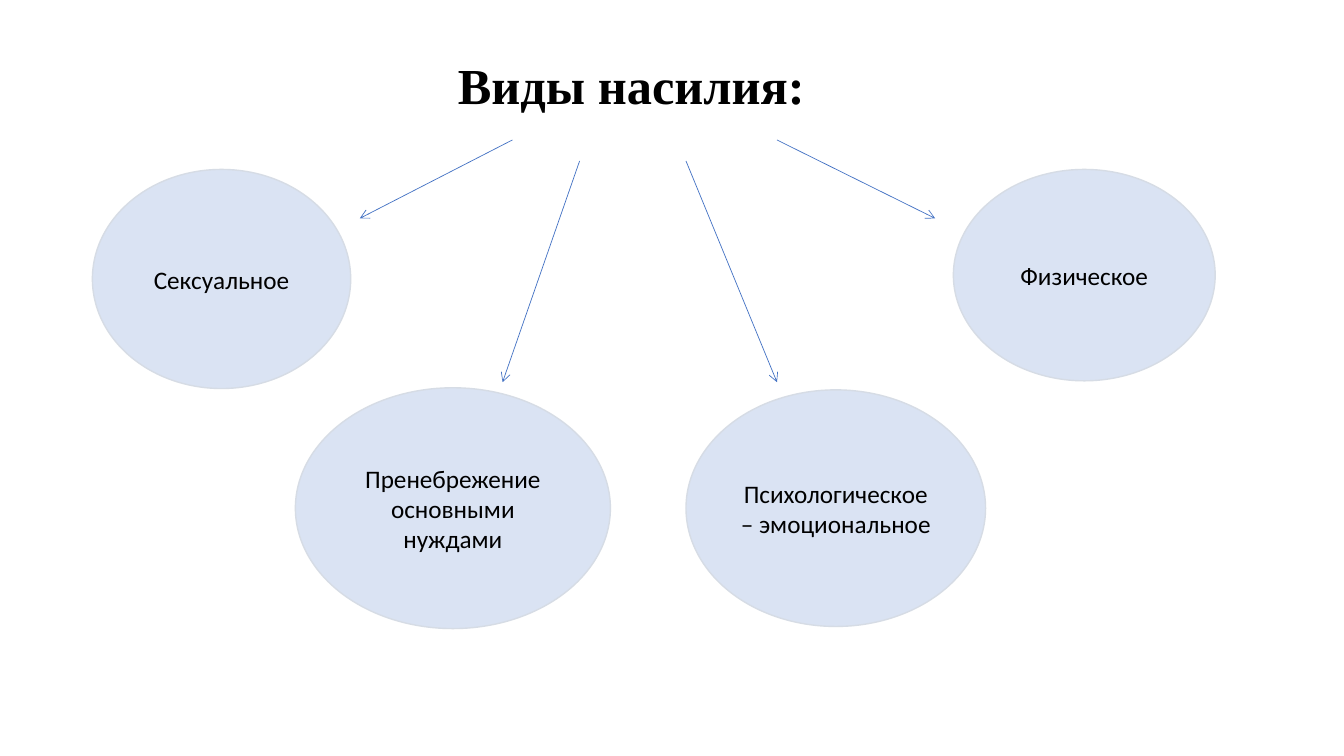
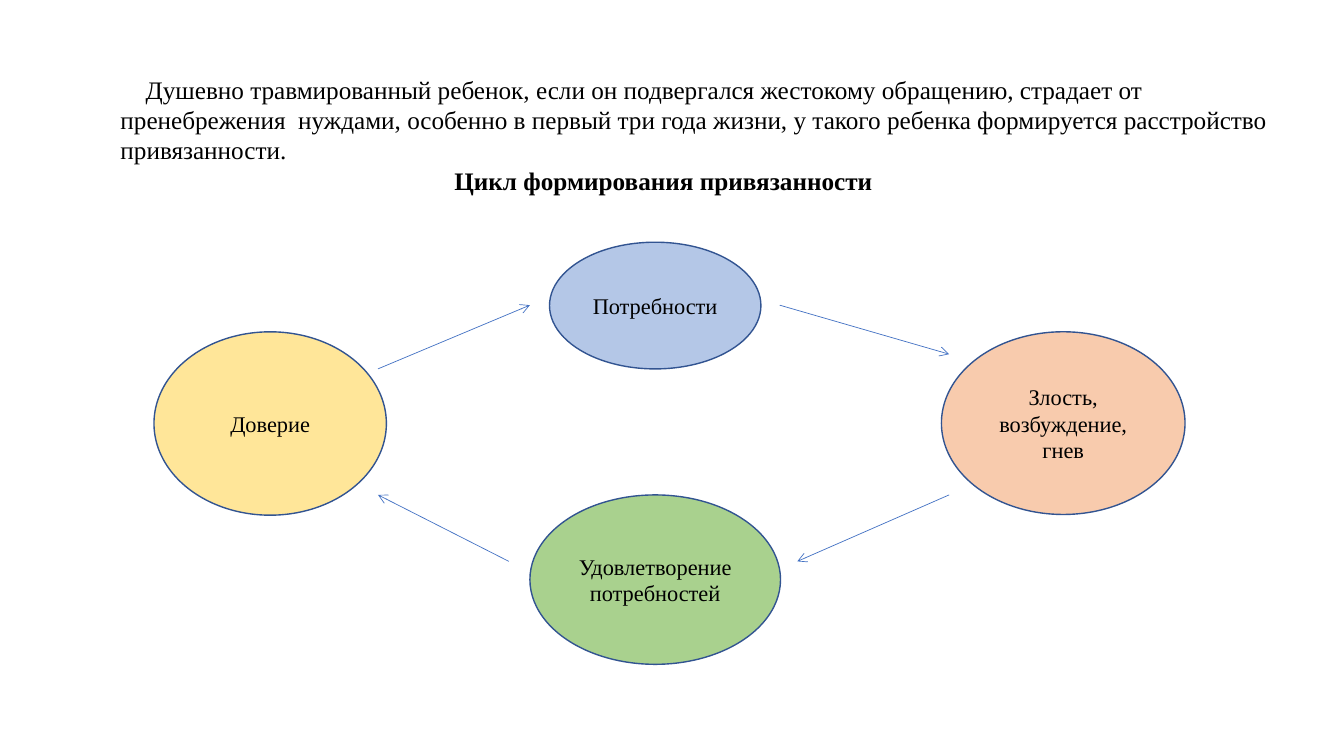
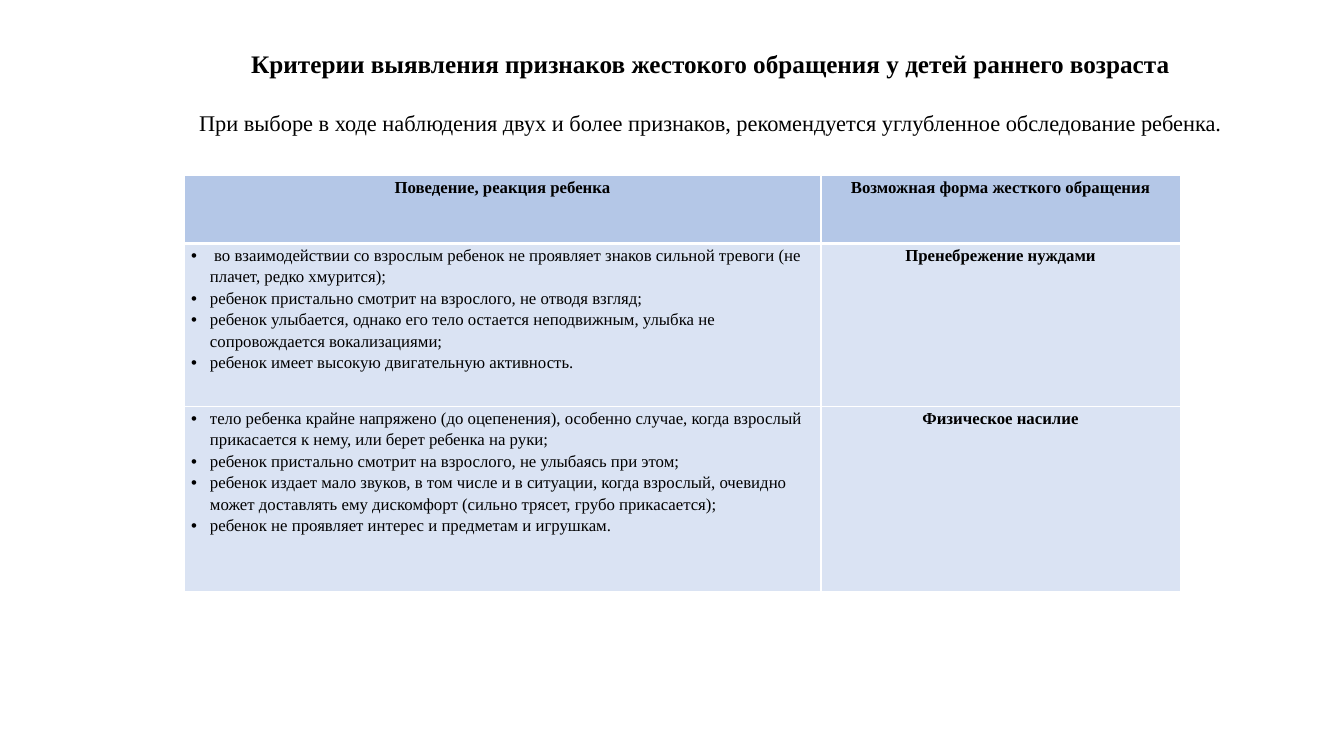
from dataclasses import dataclass

from lxml import etree
from pptx import Presentation
from pptx.dml.color import RGBColor
from pptx.enum import shapes, text
from pptx.oxml import ns
from pptx.util import Pt


@dataclass(frozen=True)
class Theme:
    serif: str = "Times New Roman"
    sans: str = "Calibri"
    ink: str = "000000"
    white: str = "FFFFFF"
    pale: str = "DAE3F3"
    blue: str = "B4C7E7"
    yellow: str = "FFE699"
    peach: str = "F8CBAD"
    green: str = "A9D18E"
    pale_edge: str = "D6DCE5"
    dark_edge: str = "325491"
    arrow: str = "4472C4"
    title: int = 36
    body: int = 18
    label: int = 16
    cell: int = 12


T = Theme()
CENTER, LEFT = text.PP_ALIGN.CENTER, text.PP_ALIGN.LEFT

# Content: ellipses are (label, fill, box), arrows are (start, end)
VIOLENCE_TITLE = "Виды насилия:"
VIOLENCE_TYPES = [
    ("Физическое", T.pale, (681, 121, 187, 151)),
    ("Сексуальное", T.pale, (66, 121, 184.5, 156.5)),
    ("Психологическое – эмоциональное", T.pale, (490, 278.5, 214, 169)),
    ("Пренебрежение основными нуждами", T.pale, (211, 277, 225, 172)),
]
VIOLENCE_ARROWS = [
    ((366, 100), (257, 156)),
    ((555, 100), (668, 156)),
    ((414, 115), (359, 273)),
    ((490, 115), (555, 273)),
]

TRAUMA_TEXT = (
    "Душевно травмированный ребенок, если он подвергался жестокому обращению, "
    "страдает от пренебрежения  нуждами, особенно в первый три года жизни, "
    "у такого ребенка формируется расстройство привязанности."
)
CYCLE_TITLE = "Цикл формирования привязанности"
CYCLE_STAGES = [
    ("Доверие", T.yellow, (110, 237, 166, 131)),
    ("Потребности", T.blue, (392.5, 173, 151, 90.5)),
    ("Злость, возбуждение, гнев", T.peach, (672.5, 237, 174, 130.5)),
    ("Удовлетворение потребностей", T.green, (378.5, 353.5, 179, 121)),
]
CYCLE_ARROWS = [
    ((557, 218), (678, 253)),
    ((678, 353.5), (569.5, 401)),
    ((363.5, 401), (270, 353.5)),
    ((270, 263.5), (378.5, 218)),
]

CRITERIA_TITLE = "Критерии выявления признаков жестокого обращения у детей раннего возраста"
CRITERIA_NOTE = (
    "При выборе в ходе наблюдения двух и более признаков, "
    "рекомендуется углубленное обследование ребенка."
)
CRITERIA_HEADER = ("Поведение, реакция ребенка", "Возможная форма жесткого обращения")
CRITERIA = [
    ([
        " во взаимодействии со взрослым ребенок не проявляет знаков сильной тревоги "
        "(не плачет, редко хмурится);",
        "ребенок пристально смотрит на взрослого, не отводя взгляд;",
        "ребенок улыбается, однако его тело остается неподвижным, улыбка не "
        "сопровождается вокализациями;",
        "ребенок имеет высокую двигательную активность.",
    ], "Пренебрежение нуждами"),
    ([
        "тело ребенка крайне напряжено (до оцепенения), особенно случае, когда "
        "взрослый прикасается к нему, или берет ребенка на руки;",
        "ребенок пристально смотрит на взрослого, не улыбаясь при этом;",
        "ребенок издает мало звуков, в том числе и в ситуации, когда взрослый, "
        "очевидно может доставлять ему дискомфорт (сильно трясет, грубо прикасается);",
        "ребенок не проявляет интерес и предметам и игрушкам.",
    ], "Физическое насилие"),
]
COLUMN_WIDTHS = (455, 256.5)
ROW_HEIGHTS = (48.5, 116.5, 132)
BULLET_INDENT = 13.5


# Shared helpers
def rgb(value):
    return RGBColor.from_string(value)


def sub(parent, tag, **attributes):
    return etree.SubElement(parent, ns.qn(tag), attributes)


def write(frame, words, size, font=T.serif, bold=False, align=LEFT,
          first_indent=0, bullet=False):
    """Add a paragraph, using the empty first one when it is free."""
    first = frame.paragraphs[0]
    paragraph = frame.add_paragraph() if first.runs else first
    paragraph.alignment = align
    properties = paragraph._p.get_or_add_pPr()
    if bullet:
        properties.set("marL", str(Pt(BULLET_INDENT)))
        first_indent = -BULLET_INDENT
        sub(properties, "a:buFont", typeface="Arial")
        sub(properties, "a:buChar", char="•")
    if first_indent:
        properties.set("indent", str(Pt(first_indent)))
    run = paragraph.add_run()
    run.text = words
    run.font.name, run.font.size, run.font.bold = font, Pt(size), bold
    run.font.color.rgb = rgb(T.ink)
    return paragraph


def add_text_box(slide, box):
    frame = slide.shapes.add_textbox(*map(Pt, box)).text_frame
    frame.word_wrap = True
    return frame


def add_ellipses(slide, ellipses, edge, font, size):
    for label, fill, box in ellipses:
        ellipse = slide.shapes.add_shape(shapes.MSO_SHAPE.OVAL, *map(Pt, box))
        ellipse.shadow.inherit = False
        ellipse.fill.solid()
        ellipse.fill.fore_color.rgb = rgb(fill)
        ellipse.line.color.rgb = rgb(edge)
        ellipse.line.width = Pt(1)
        frame = ellipse.text_frame
        frame.word_wrap = True
        frame.vertical_anchor = text.MSO_ANCHOR.MIDDLE
        write(frame, label, size, font, align=CENTER)


def add_arrows(slide, arrows):
    for start, end in arrows:
        arrow = slide.shapes.add_connector(
            shapes.MSO_CONNECTOR.STRAIGHT, *map(Pt, start + end))
        arrow.line.color.rgb = rgb(T.arrow)
        arrow.line.width = Pt(0.5)
        sub(arrow.line._get_or_add_ln(), "a:tailEnd", type="arrow")
        sub(arrow._element.spPr, "a:effectLst")


def style_cell(cell, fill, top, bottom):
    cell.margin_left = cell.margin_right = Pt(5)
    cell.margin_top = cell.margin_bottom = 0
    properties = cell._tc.get_or_add_tcPr()
    for side, width in zip("LRTB", (1, 1, top, bottom)):
        border = sub(properties, f"a:ln{side}", w=str(Pt(width)))
        sub(sub(border, "a:solidFill"), "a:srgbClr", val=T.white)
    cell.fill.solid()
    cell.fill.fore_color.rgb = rgb(fill)


# Slides
def build_violence(slide):
    write(add_text_box(slide, (211, 35, 480, 80)), VIOLENCE_TITLE, T.title,
          bold=True, align=CENTER)
    add_ellipses(slide, VIOLENCE_TYPES, T.pale_edge, T.sans, T.body)
    add_arrows(slide, VIOLENCE_ARROWS)


def build_cycle(slide):
    intro = add_text_box(slide, (79, 49.5, 837, 117))
    write(intro, TRAUMA_TEXT, T.body, first_indent=18)
    write(intro, CYCLE_TITLE, T.body, bold=True, first_indent=238.5)
    add_ellipses(slide, CYCLE_STAGES, T.dark_edge, T.serif, T.label)
    add_arrows(slide, CYCLE_ARROWS)


def build_criteria(slide):
    heading = add_text_box(slide, (100, 31, 815, 92))
    write(heading, CRITERIA_TITLE, T.body, bold=True, align=CENTER)
    note = write(heading, CRITERIA_NOTE, T.label, align=CENTER)
    note.space_before = Pt(21.5)

    table = slide.shapes.add_table(
        len(ROW_HEIGHTS), len(COLUMN_WIDTHS), Pt(131.5), Pt(125.5),
        Pt(sum(COLUMN_WIDTHS)), Pt(sum(ROW_HEIGHTS))).table
    table.horz_banding = False
    for column, width in zip(table.columns, COLUMN_WIDTHS):
        column.width = Pt(width)
    for row, height in zip(table.rows, ROW_HEIGHTS):
        row.height = Pt(height)

    for r, row in enumerate([CRITERIA_HEADER] + CRITERIA):
        for c, content in enumerate(row):
            cell = table.cell(r, c)
            style_cell(cell, T.pale if r else T.blue,
                       top=3 if r == 1 else 1, bottom=1 if r else 3)
            signs = isinstance(content, list)
            for words in content if signs else [content]:
                paragraph = write(cell.text_frame, words, T.cell, bold=not signs,
                                  align=LEFT if signs else CENTER, bullet=signs)
                paragraph.line_spacing = 1.15


def main():
    deck = Presentation()
    deck.slide_width, deck.slide_height = Pt(960), Pt(540)
    for build in (build_violence, build_cycle, build_criteria):
        build(deck.slides.add_slide(deck.slide_layouts[6]))
    deck.save("out.pptx")


if __name__ == "__main__":
    main()
